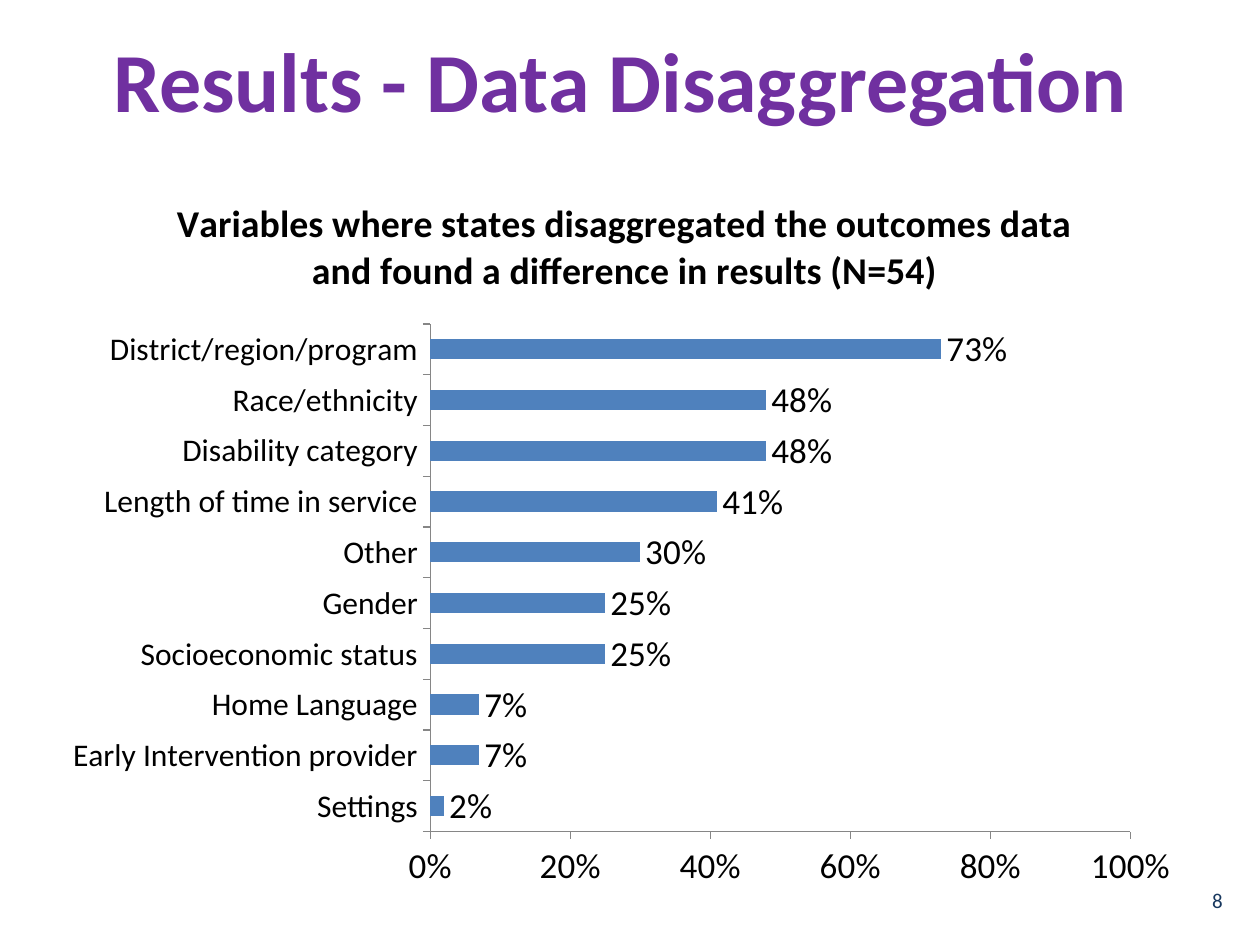
from dataclasses import dataclass

from lxml.etree import SubElement
from pptx import Presentation
from pptx.chart.data import CategoryChartData
from pptx.dml.color import RGBColor
from pptx.enum.chart import XL_CHART_TYPE, XL_LABEL_POSITION, XL_TICK_MARK
from pptx.enum.text import MSO_ANCHOR, PP_ALIGN
from pptx.oxml.ns import qn
from pptx.util import Inches, Pt


@dataclass(frozen=True)
class Theme:
    font: str = "Calibri"
    title: str = "7030A0"
    page: str = "17375E"
    ink: str = "000000"
    bar: str = "4F81BD"
    axis: str = "868686"
    big: float = 48
    head: float = 21.6
    value: float = 20
    label: float = 18
    small: float = 12


theme = Theme()
title = "Results - Data Disaggregation "
page = "8"
head = "Variables where states disaggregated the outcomes data and found a difference in results (N=54)"
rows = [
    ("Settings", 0.02),
    ("Early Intervention provider", 0.07),
    ("Home Language", 0.07),
    ("Socioeconomic status", 0.25),
    ("Gender", 0.25),
    ("Other", 0.3),
    ("Length of time in service", 0.41),
    ("Disability category", 0.48),
    ("Race/ethnicity", 0.48),
    ("District/region/program", 0.73),
]
plot_area = {"x": 0.336, "y": 0.213, "w": 0.59, "h": 0.691}


def style(font, size, color=theme.ink, bold=False):
    font.name = theme.font
    font.size = Pt(size)
    font.bold = bold
    font.color.rgb = RGBColor.from_string(color)


def add_text(slide, text, box, size, color, bold=False, align=PP_ALIGN.CENTER,
             anchor=MSO_ANCHOR.MIDDLE, wrap=True, pad=0.05):
    frame = slide.shapes.add_textbox(*map(Inches, box)).text_frame
    frame.word_wrap = wrap
    frame.vertical_anchor = anchor
    frame.margin_left = frame.margin_right = Inches(pad)
    frame.margin_top = frame.margin_bottom = Inches(0.05)
    para = frame.paragraphs[0]
    para.alignment = align
    run = para.add_run()
    run.text = text
    style(run.font, size, color, bold)


def set_axis(axis, size):
    axis.has_major_gridlines = False
    axis.major_tick_mark = XL_TICK_MARK.OUTSIDE
    axis.minor_tick_mark = XL_TICK_MARK.NONE
    axis.format.line.color.rgb = RGBColor.from_string(theme.axis)
    axis.format.line.width = Pt(0.75)
    style(axis.tick_labels.font, size)


def set_plot(chart, area):
    node = chart._chartSpace.chart.plotArea
    for old in node.findall(qn("c:layout")):
        node.remove(old)
    layout = node.makeelement(qn("c:layout"))
    node.insert(0, layout)
    manual = SubElement(layout, qn("c:manualLayout"))
    parts = [("layoutTarget", "inner"), ("xMode", "edge"), ("yMode", "edge")]
    for name, val in parts + list(area.items()):
        SubElement(manual, qn("c:" + name)).set("val", str(val))


def add_bars(slide, box):
    data = CategoryChartData(number_format="0%")
    data.categories = [name for name, val in rows]
    data.add_series("Series 1", [val for name, val in rows])
    chart = slide.shapes.add_chart(
        XL_CHART_TYPE.BAR_CLUSTERED, *map(Inches, box), data).chart
    style(chart.font, theme.label)
    chart.has_legend = False
    chart.has_title = True
    para = chart.chart_title.text_frame.paragraphs[0]
    run = para.add_run()
    run.text = head
    style(run.font, theme.head, bold=True)
    chart.chart_title.include_in_layout = False

    set_axis(chart.category_axis, theme.label)
    axis = chart.value_axis
    set_axis(axis, theme.value)
    axis.minimum_scale, axis.maximum_scale, axis.major_unit = 0, 1, 0.2
    axis.tick_labels.number_format = "0%"
    axis.tick_labels.number_format_is_linked = False

    plot = chart.plots[0]
    plot.gap_width = 150
    plot.vary_by_categories = False
    bars = plot.series[0]
    bars.format.fill.solid()
    bars.format.fill.fore_color.rgb = RGBColor.from_string(theme.bar)
    labels = bars.data_labels
    labels.show_value = True
    labels.number_format = "0%"
    labels.number_format_is_linked = False
    labels.position = XL_LABEL_POSITION.OUTSIDE_END
    style(labels.font, theme.value)
    set_plot(chart, plot_area)


def main():
    deck = Presentation()
    deck.slide_width, deck.slide_height = Inches(10), Inches(7.5)
    slide = deck.slides.add_slide(deck.slide_layouts[6])
    add_text(slide, title, (0.5, 0, 9, 1.25), theme.big, theme.title,
             bold=True, pad=0.1)
    add_text(slide, page, (9.57, 7.12, 0.17, 0.17), theme.small, theme.page,
             align=PP_ALIGN.RIGHT, anchor=MSO_ANCHOR.BOTTOM, wrap=False)
    add_bars(slide, (0.25, 1.33, 9.42, 5.83))
    deck.save("out.pptx")


if __name__ == "__main__":
    main()
